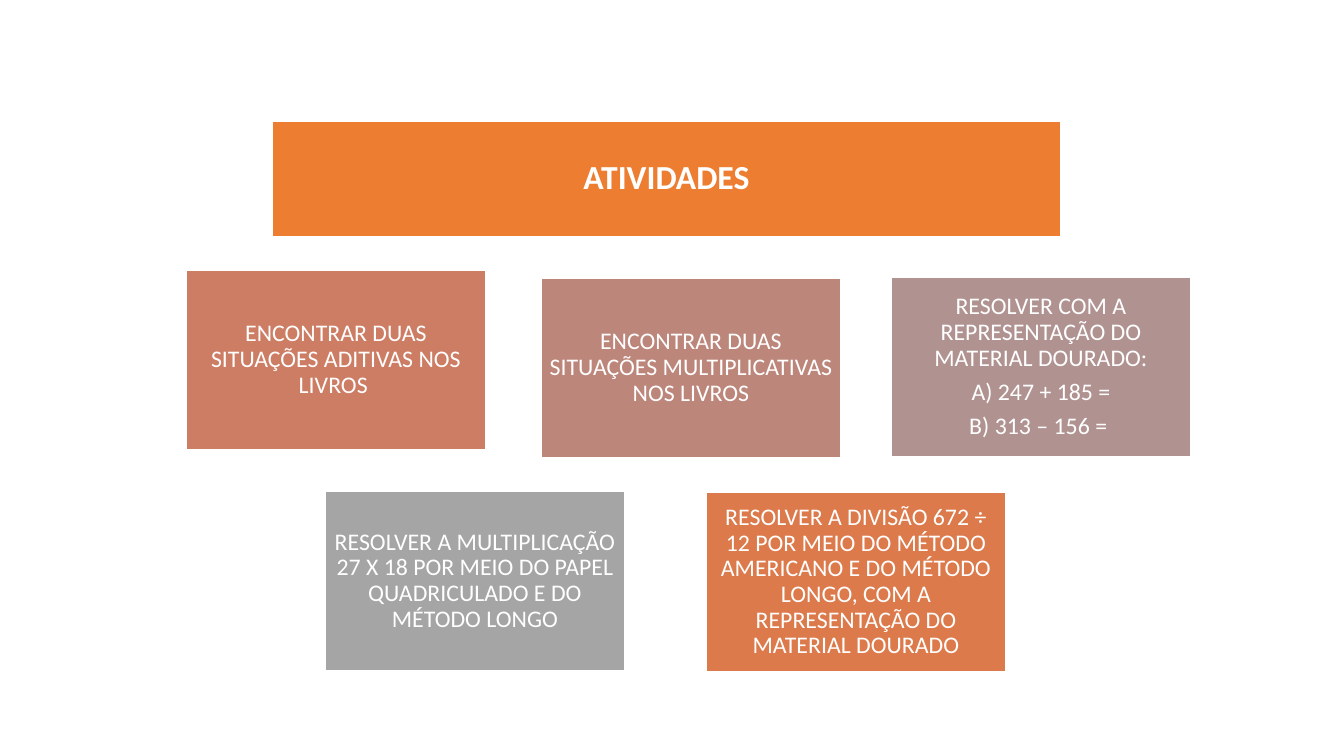
from pptx import Presentation
from pptx.dml.color import RGBColor
from pptx.enum.shapes import MSO_SHAPE as Shape
from pptx.enum.text import MSO_ANCHOR as Anchor, PP_ALIGN as Align
from pptx.util import Emu, Pt

TITLE = "ATIVIDADES"
TASKS = [
    (186, 270, "CC7D64", ["ENCONTRAR DUAS SITUAÇÕES ADITIVAS NOS LIVROS "]),
    (541, 278, "BD867B", ["ENCONTRAR DUAS SITUAÇÕES MULTIPLICATIVAS NOS LIVROS"]),
    (891, 277, "B09391", ["RESOLVER COM A REPRESENTAÇÃO DO MATERIAL DOURADO:",
                          "A) 247 + 185 =", "B) 313 – 156 = "]),
    (325, 491, "A5A5A5", ["RESOLVER A MULTIPLICAÇÃO 27 X 18 POR MEIO DO PAPEL "
                          "QUADRICULADO E DO MÉTODO LONGO"]),
    (706, 492, "DC7A4B", ["RESOLVER A DIVISÃO 672 ÷ 12 POR MEIO DO MÉTODO "
                          "AMERICANO E DO MÉTODO LONGO, COM A REPRESENTAÇÃO "
                          "DO MATERIAL DOURADO"]),
]
CARD_W, CARD_H = 300, 180
WHITE = "FFFFFF"


def px(n):
    return Emu(round(n * 914400 / 100.8))


def color(code):
    return RGBColor.from_string(code)


def write(box, lines, size=17, bold=False, inset=7):
    frame = box.text_frame
    frame.word_wrap = True
    frame.vertical_anchor = Anchor.MIDDLE
    frame.margin_left = frame.margin_right = px(inset)
    frame.margin_top = frame.margin_bottom = px(inset)
    for i, line in enumerate(lines):
        para = frame.add_paragraph() if i else frame.paragraphs[0]
        para.alignment = Align.CENTER
        para.line_spacing = 0.9
        para.space_after = Pt(round(size * 0.35))
        run = para.add_run()
        run.text = line
        font = run.font
        font.name, font.size, font.bold = "Calibri", Pt(size), bold
        font.color.rgb = color(WHITE)


def block(left, top, width, height, fill):
    box = slide.shapes.add_shape(Shape.RECTANGLE, px(left), px(top), px(width), px(height))
    box.shadow.inherit = False
    box.fill.solid()
    box.fill.fore_color.rgb = color(fill)
    box.line.color.rgb = color(WHITE)
    box.line.width = Pt(1)
    return box


deck = Presentation()
deck.slide_width, deck.slide_height = px(1344), px(756)
slide = deck.slides.add_slide(deck.slide_layouts[6])

write(block(272, 121, 789, 116, "ED7D31"), [TITLE], size=24, bold=True, inset=10)
for left, top, fill, lines in TASKS:
    write(block(left, top, CARD_W, CARD_H, fill), lines)

deck.save("out.pptx")
